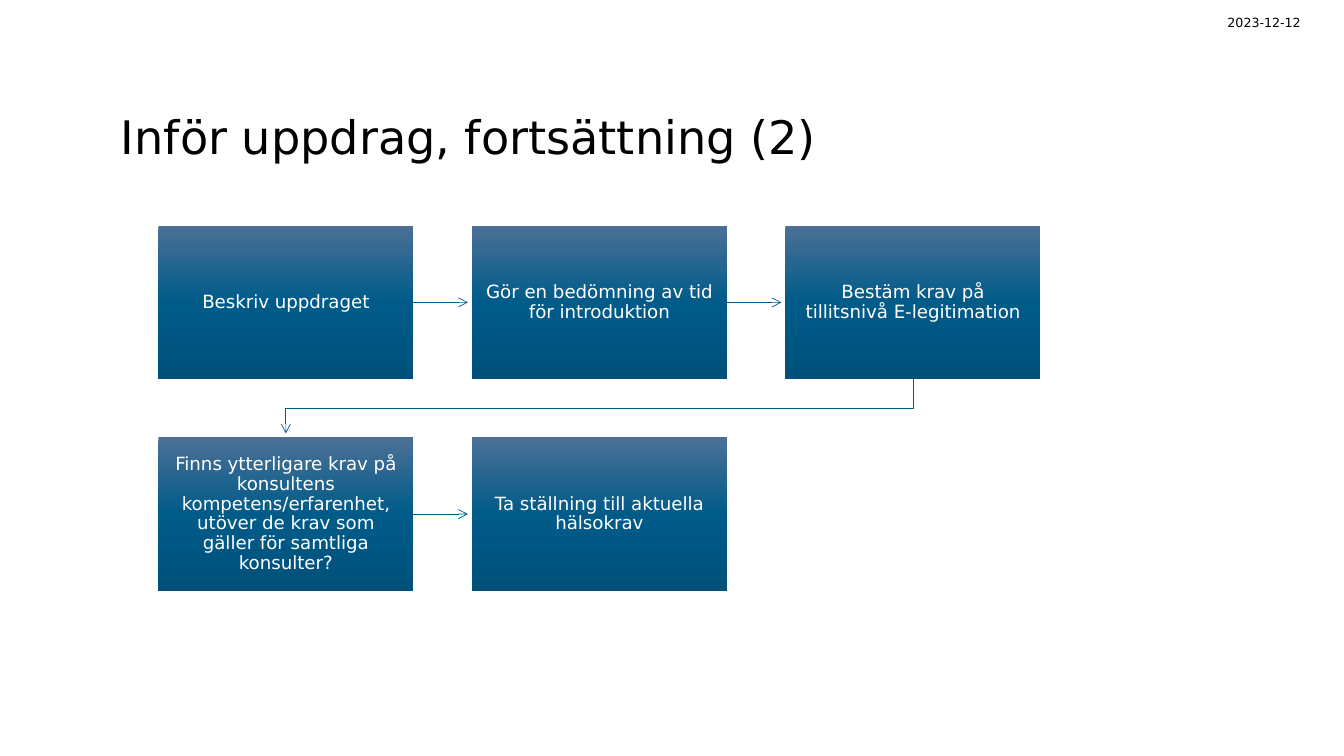
from dataclasses import dataclass

from pptx import Presentation
from pptx.dml.color import RGBColor
from pptx.enum.shapes import MSO_CONNECTOR, MSO_SHAPE
from pptx.enum.text import MSO_ANCHOR, PP_ALIGN
from pptx.oxml import parse_xml
from pptx.oxml.ns import nsdecls, qn
from pptx.oxml.xmlchemy import OxmlElement
from pptx.util import Inches, Pt


@dataclass(frozen=True)
class Theme:
    font: str = "DejaVu Sans"
    ink: str = "000000"
    step_ink: str = "FFFFFF"
    arrow: str = "005B89"
    step_stops: tuple = ((0, "4B7096"), (50, "005B89"), (100, "00517A"))
    title_size: float = 33
    step_size: float = 13
    date_size: float = 9
    arrow_width: float = 0.5


THEME = Theme()

STEPS = [
    "Beskriv uppdraget",
    "Gör en bedömning av tid för introduktion",
    "Bestäm krav på tillitsnivå E-legitimation",
    "Finns ytterligare krav på konsultens kompetens/erfarenhet, "
    "utöver de krav som gäller för samtliga konsulter?",
    "Ta ställning till aktuella hälsokrav",
]
COLUMNS = 3
STEP_WIDTH, STEP_HEIGHT = 2.53, 1.52
COLUMN_PITCH, ROW_PITCH = 3.11, 2.1
ARROW_GAP = 0.04


def write(holder, text, size, color, align, anchor, spacing=1.0, insets=(0, 0)):
    frame = holder.text_frame
    frame.word_wrap = True
    frame.vertical_anchor = anchor
    frame.margin_left = frame.margin_right = Inches(insets[0])
    frame.margin_top = frame.margin_bottom = Inches(insets[1])
    frame.text = text
    paragraph = frame.paragraphs[0]
    paragraph.alignment = align
    paragraph.line_spacing = spacing
    font = paragraph.runs[0].font
    font.name = THEME.font
    font.size = Pt(size)
    font.color.rgb = RGBColor.from_string(color)


def add_heading(slide, left, top, width, height):
    title = slide.shapes.add_textbox(*map(Inches, (left, top, width, height)))
    write(title, "Inför uppdrag, fortsättning (2)", THEME.title_size, THEME.ink,
          PP_ALIGN.LEFT, MSO_ANCHOR.BOTTOM, spacing=1.1)


def add_date(slide, left, top, width, height):
    date = slide.shapes.add_textbox(*map(Inches, (left, top, width, height)))
    write(date, "2023-12-12", THEME.date_size, THEME.ink,
          PP_ALIGN.RIGHT, MSO_ANCHOR.MIDDLE)


def fill_with_gradient(shape):
    shape.fill.gradient()
    shape.fill.gradient_angle = 270
    stops = "".join(
        f'<a:gs pos="{percent * 1000}"><a:srgbClr val="{color}"/></a:gs>'
        for percent, color in THEME.step_stops)
    gradient = shape.element.spPr.find(qn("a:gradFill"))
    gradient.replace(gradient.find(qn("a:gsLst")),
                     parse_xml(f'<a:gsLst {nsdecls("a")}>{stops}</a:gsLst>'))


def add_step(slide, text, left, top):
    step = slide.shapes.add_shape(
        MSO_SHAPE.RECTANGLE,
        *map(Inches, (left, top, STEP_WIDTH, STEP_HEIGHT)))
    step.shadow.inherit = False
    step.line.fill.background()
    fill_with_gradient(step)
    write(step, text, THEME.step_size, THEME.step_ink, PP_ALIGN.CENTER,
          MSO_ANCHOR.MIDDLE, spacing=0.9, insets=(0.12, 0.13))
    return step


def style_arrow(arrow):
    arrow.line.color.rgb = RGBColor.from_string(THEME.arrow)
    arrow.line.width = Pt(THEME.arrow_width)
    head = OxmlElement("a:tailEnd")
    head.set("type", "arrow")
    arrow.line._get_or_add_ln().append(head)


def add_row_arrow(slide, step, following):
    middle = step.top + step.height // 2
    arrow = slide.shapes.add_connector(
        MSO_CONNECTOR.STRAIGHT, step.left + step.width, middle,
        following.left - Inches(ARROW_GAP), middle)
    arrow.begin_connect(step, 3)
    style_arrow(arrow)
    arrow.element.spPr.append(OxmlElement("a:effectLst"))


def add_wrap_arrow(slide, step, following):
    """Lead from the end of one row to the start of the next."""
    start_x = step.left + step.width // 2
    end_x = following.left + following.width // 2
    bottom = step.top + step.height
    turn = (bottom + following.top) // 2
    route = slide.shapes.build_freeform(start_x, bottom)
    route.add_line_segments(
        [(start_x, turn), (end_x, turn),
         (end_x, following.top - Inches(ARROW_GAP))], close=False)
    arrow = route.convert_to_shape()
    arrow.fill.background()
    style_arrow(arrow)
    arrow.shadow.inherit = False


def add_flow(slide, left, top):
    steps = [
        add_step(slide, text, left + index % COLUMNS * COLUMN_PITCH,
                 top + index // COLUMNS * ROW_PITCH)
        for index, text in enumerate(STEPS)]
    for step, following in zip(steps, steps[1:]):
        same_row = step.top == following.top
        add_arrow = add_row_arrow if same_row else add_wrap_arrow
        add_arrow(slide, step, following)


def main():
    presentation = Presentation()
    presentation.slide_width = Inches(13.33)
    presentation.slide_height = Inches(7.5)
    slide = presentation.slides.add_slide(presentation.slide_layouts[6])
    add_heading(slide, 1.2, 0.47, 9.45, 1.15)
    add_date(slide, 11.92, 0.15, 0.98, 0.15)
    add_flow(slide, 1.57, 2.24)
    presentation.save("out.pptx")


if __name__ == "__main__":
    main()
